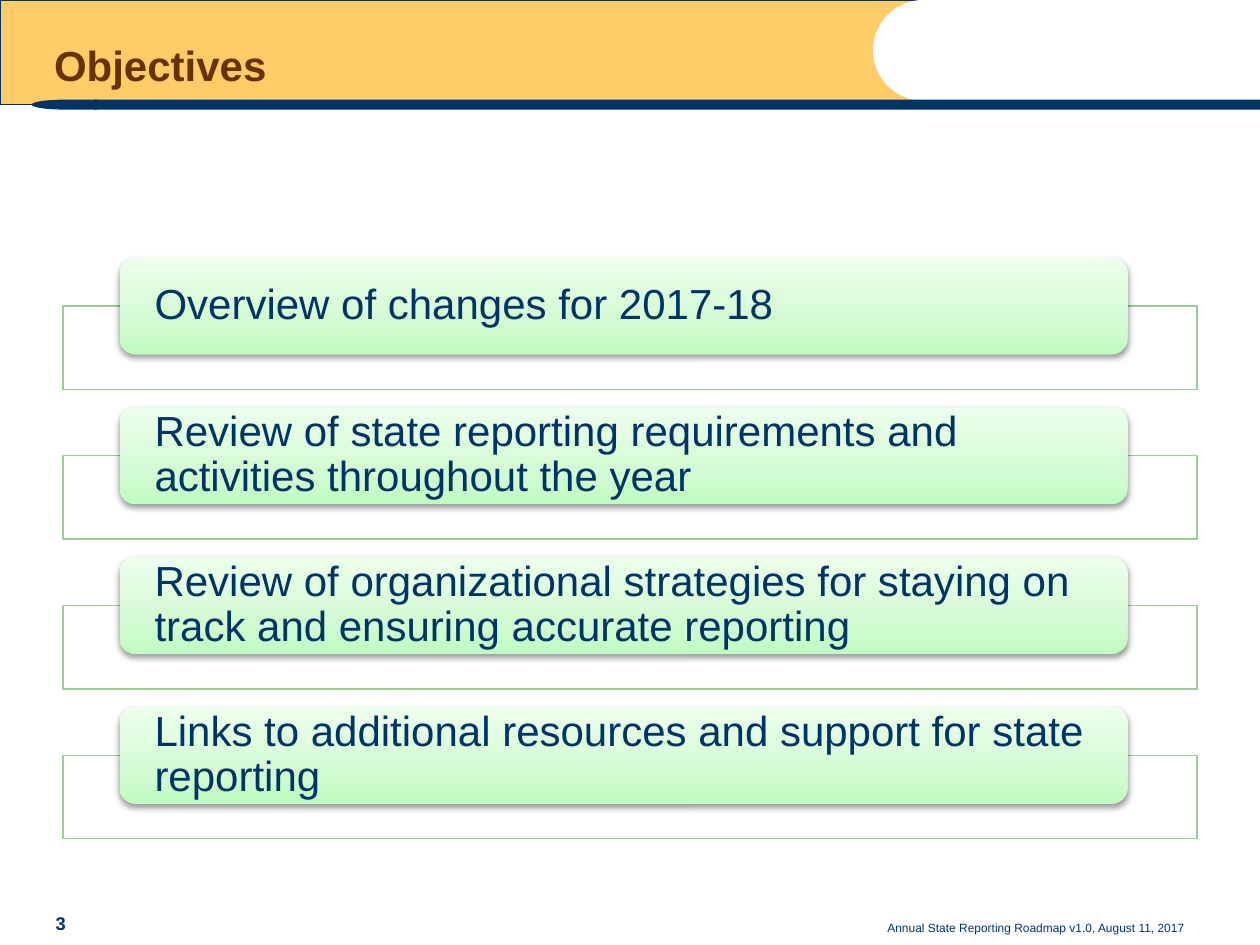
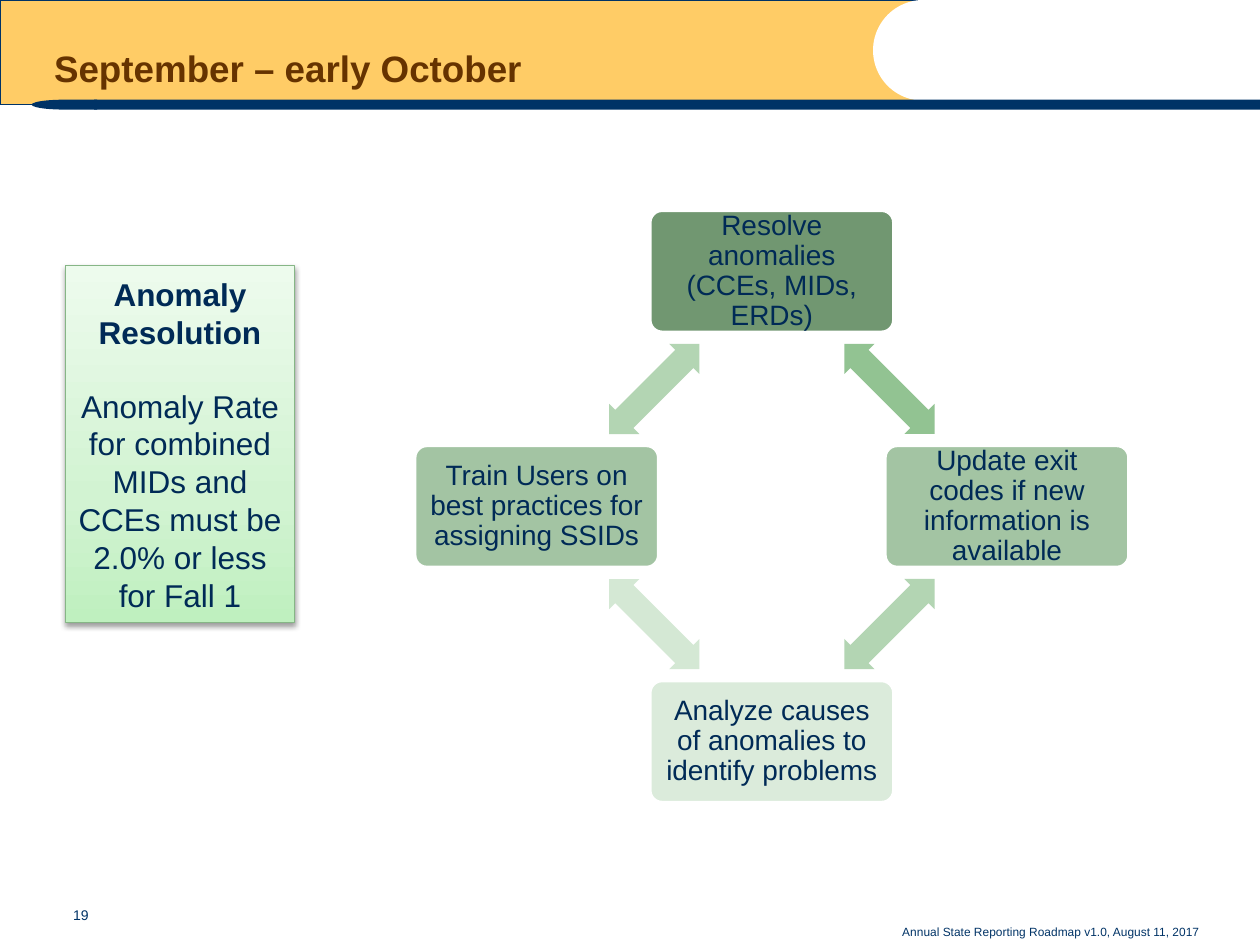
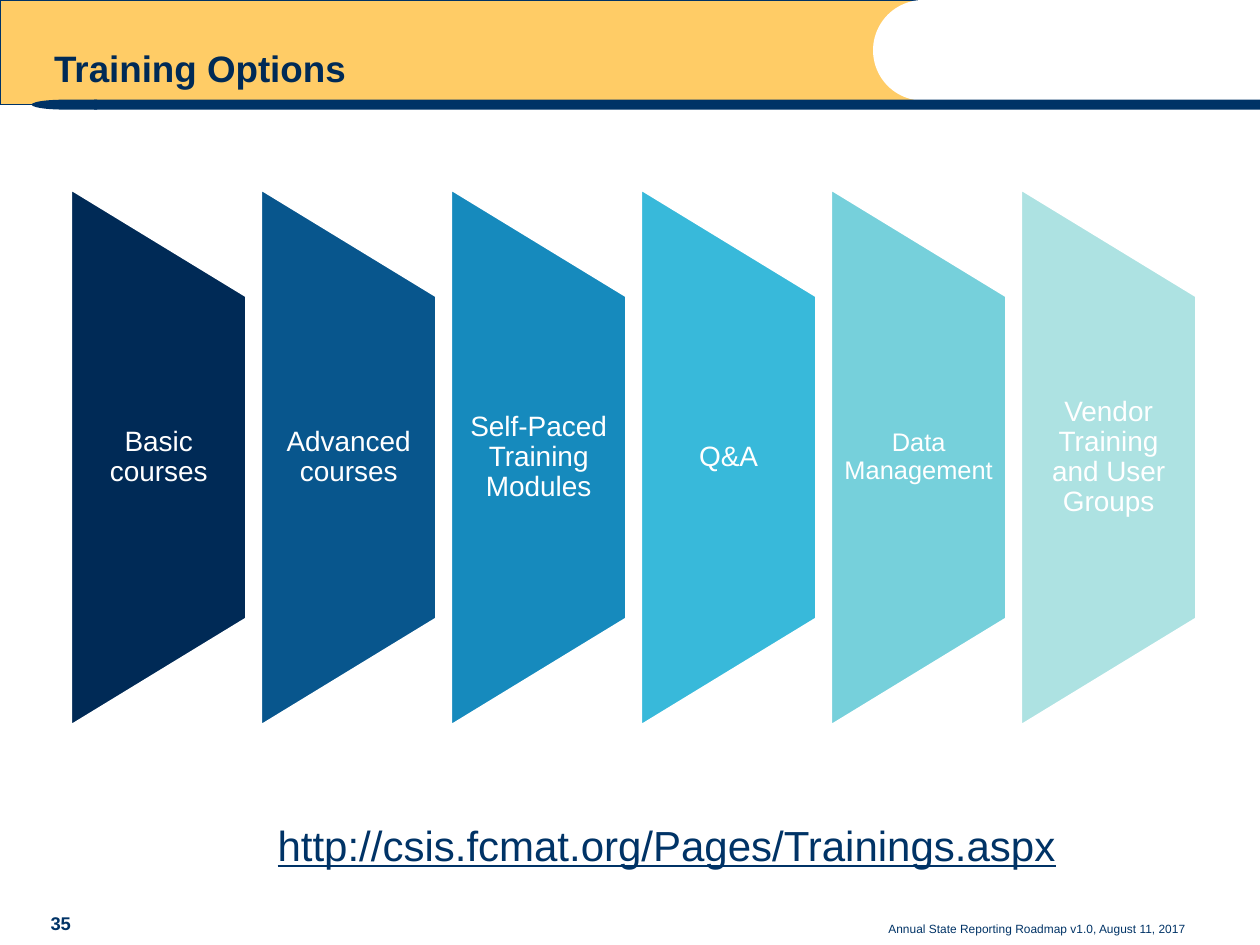
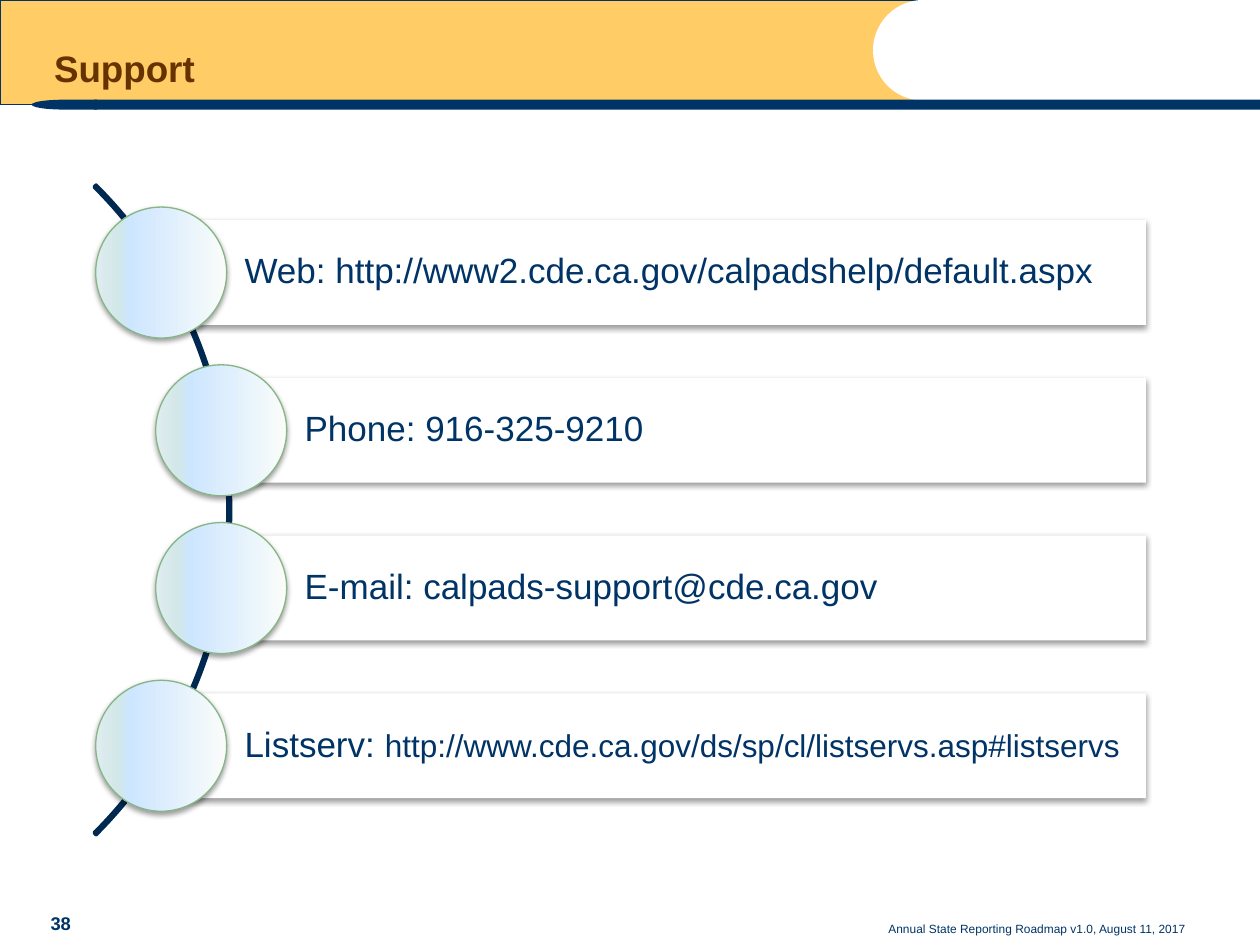
from dataclasses import dataclass
from math import cos, radians, sin

from lxml import etree
from pptx import Presentation
from pptx import util as u
from pptx.dml.color import RGBColor
from pptx.enum import shapes, text
from pptx.oxml.ns import qn

Kind = shapes.MSO_SHAPE
Align = text.PP_ALIGN
Anchor = text.MSO_ANCHOR


@dataclass(frozen=True)
class Theme:
    font: str = "Arial"
    navy: str = "003366"
    deep: str = "002A56"
    arc: str = "002952"
    brown: str = "663300"
    gold: str = "FFCC66"
    white: str = "FFFFFF"
    frame_line: str = "99CC99"
    soft_line: str = "86B686"
    mint: tuple = ((0, "C1FBC1"), (35, "D3FBD3"), (100, "EDFFED"))
    sage: tuple = ((0, "BFF0BF"), (35, "D2F3D2"), (100, "EDFBED"))
    bubble: tuple = ((0, "FAFCFA"), (74, "CDE6FF"), (83, "D2E7E8"), (100, "E0EDF0"))
    main_title: float = 24
    title: float = 21
    large: float = 24
    contact: float = 20
    callout: float = 18
    label: float = 16
    small_label: float = 14.5
    page: float = 10.5
    small_page: float = 8
    footer: float = 6.8


THEME = Theme()
FOOTER = "Annual State Reporting Roadmap v1.0, August 11, 2017"


def rgb(colour):
    return RGBColor.from_string(colour)


def cm_box(*lengths):
    return [u.Cm(length) for length in lengths]


def format_run(run, size, colour, bold=False, underline=False):
    run.font.name = THEME.font
    run.font.size = u.Pt(size)
    run.font.color.rgb = rgb(colour)
    run.font.bold = bold
    run.font.underline = underline


def write(shape, words, size, colour=THEME.navy, align=Align.LEFT, anchor=Anchor.MIDDLE,
          insets=(0.25, 0.13, 0.25, 0.13), spacing=0.9, **style):
    """Fill a shape with one paragraph; insets are left, top, right, bottom in cm."""
    frame = shape.text_frame
    frame.word_wrap = True
    frame.vertical_anchor = anchor
    (frame.margin_left, frame.margin_top,
     frame.margin_right, frame.margin_bottom) = cm_box(*insets)
    paragraph = frame.paragraphs[0]
    paragraph.text = words
    paragraph.alignment = align
    paragraph.line_spacing = spacing
    format_run(paragraph.runs[0], size, colour, **style)
    return paragraph


def add_text(slide, box, words, size, **style):
    label = slide.shapes.add_textbox(*cm_box(*box))
    write(label, words, size, **style)
    return label


def add_form(slide, kind, box, fill=None, line=None, width=0.75):
    form = slide.shapes.add_shape(kind, *cm_box(*box))
    form.shadow.inherit = False
    if fill:
        form.fill.solid()
        form.fill.fore_color.rgb = rgb(fill)
    else:
        form.fill.background()
    if line:
        form.line.color.rgb = rgb(line)
        form.line.width = u.Pt(width)
    else:
        form.line.fill.background()
    return form


def add_gradient(form, stops, angle):
    properties = form._element.spPr
    gradient = etree.Element(qn("a:gradFill"), rotWithShape="1")
    stop_list = etree.SubElement(gradient, qn("a:gsLst"))
    for percent, colour in stops:
        stop = etree.SubElement(stop_list, qn("a:gs"), pos=str(percent * 1000))
        etree.SubElement(stop, qn("a:srgbClr"), val=colour)
    etree.SubElement(gradient, qn("a:lin"), ang=str(angle * 60000), scaled="0")
    properties.replace(properties.find(qn("a:noFill")), gradient)


def add_shadow(form):
    effects = form._element.spPr.find(qn("a:effectLst"))
    shadow = etree.SubElement(effects, qn("a:outerShdw"), blurRad="40000", dist="20000",
                              dir="5400000", rotWithShape="0")
    colour = etree.SubElement(shadow, qn("a:srgbClr"), val="000000")
    etree.SubElement(colour, qn("a:alpha"), val="38000")


def set_up_layout(layout, slide):
    """Move the header band, drawn on the slide, to the layout that all slides share."""
    title, *unused = layout.placeholders
    title.left, title.top, title.width, title.height = cm_box(0.84, 0.48, 15.24, 1.47)
    for placeholder in unused:
        placeholder._element.getparent().remove(placeholder._element)

    banner = add_form(slide, Kind.RECTANGLE, (0, 0, 18.62, 2.11), THEME.gold, THEME.navy)
    notch = add_form(slide, Kind.OVAL, (17.6, 0, 2.03, 2.03), THEME.white)
    rule = add_form(slide, Kind.RECTANGLE, (1.9, 2.01, 23.5, 0.2), THEME.navy)
    rule_tip = add_form(slide, Kind.FLOWCHART_DELAY, (0.64, 2.01, 1.32, 0.2), THEME.navy)
    rule_tip._element.spPr.find(qn("a:xfrm")).set("flipH", "1")
    for part in (banner, notch, rule, rule_tip):
        title._element.addprevious(part._element)


def add_title(slide, words, size=THEME.title, colour=THEME.brown):
    title = slide.shapes.title
    write(title, words, size, colour, anchor=Anchor.BOTTOM, bold=True)
    title.text_frame.auto_size = text.MSO_AUTO_SIZE.NONE


def add_footer(slide, right=24.15, bottom=19):
    add_text(slide, (right - 13.56, bottom - 1.02, 13.56, 1.02), FOOTER, THEME.footer,
             align=Align.RIGHT, anchor=Anchor.BOTTOM, spacing=1)


def add_page_number(slide, number, size=THEME.page, bottom=18.97, align=Align.CENTER,
                    bold=True):
    add_text(slide, (0.41, bottom - 0.94, 1.63, 0.94), number, size, align=align,
             anchor=Anchor.BOTTOM, spacing=1, bold=bold)


def build_objectives(slide):
    add_title(slide, "Objectives", THEME.main_title)
    objectives = (
        "Overview of changes for 2017-18",
        "Review of state reporting requirements and activities throughout the year",
        "Review of organizational strategies for staying on track and ensuring accurate reporting",
        "Links to additional resources and support for state reporting",
    )
    for row, objective in enumerate(objectives):
        top = 5.18 + row * 3.02
        add_form(slide, Kind.RECTANGLE, (1.27, top + 0.99, 22.86, 1.68),
                 THEME.white, THEME.frame_line)
        bar = add_form(slide, Kind.ROUNDED_RECTANGLE, (2.41, top, 20.32, 1.97))
        add_gradient(bar, THEME.mint, 270)
        add_shadow(bar)
        write(bar, objective, THEME.large, insets=(0.61, 0, 0.61, 0))
    add_footer(slide, right=24.13, bottom=18.97)
    add_page_number(slide, "3")


def build_anomaly_cycle(slide):
    add_title(slide, "September – early October")
    centre_x, centre_y, radius = 15.56, 10.21, 4.74
    card_width, card_height = 4.92, 2.46
    arrow_width, arrow_height = 2.57, 0.86
    steps = (
        ("Resolve anomalies (CCEs, MIDs, ERDs)", "719771", "92C392"),
        ("Update exit codes if new information is available", "A3C4A3", "B3D5B3"),
        ("Analyze causes of anomalies to identify problems", "DBEBDB", "D4E8D4"),
        ("Train Users on best practices for assigning SSIDs", "A3C4A3", "B3D5B3"),
    )

    def around(degrees, distance, width, height):
        """Box whose middle lies on the ring at the given angle."""
        angle = radians(degrees)
        return (centre_x + distance * cos(angle) - width / 2,
                centre_y + distance * sin(angle) - height / 2, width, height)

    for turn, (step, card_fill, arrow_fill) in enumerate(steps):
        angle = turn * 90 - 90
        card = add_form(slide, Kind.ROUNDED_RECTANGLE,
                        around(angle, radius, card_width, card_height),
                        card_fill, THEME.white, 2)
        card.adjustments[0] = 0.1
        write(card, step, THEME.label, THEME.deep, Align.CENTER, insets=(0.18,) * 4)
        arrow = add_form(slide, Kind.LEFT_RIGHT_ARROW,
                         around(angle + 45, radius * cos(radians(45)),
                                arrow_width, arrow_height), arrow_fill)
        arrow.adjustments[0] = 0.6
        arrow.adjustments[1] = 0.5
        arrow.rotation = angle + 135

    add_page_number(slide, "19", THEME.small_page, 18.75, Align.RIGHT, bold=False)
    callout = add_form(slide, Kind.RECTANGLE, (1.32, 5.36, 4.62, 7.19), line=THEME.soft_line)
    add_gradient(callout, THEME.sage, 270)
    add_shadow(callout)
    write(callout, "Anomaly Resolution", THEME.callout, THEME.deep, Align.CENTER,
          spacing=1, bold=True)
    limit = callout.text_frame.add_paragraph()
    limit.text = "Anomaly Rate for combined MIDs and CCEs must be 2.0% or less for Fall 1"
    limit.alignment = Align.CENTER
    limit.space_before = u.Pt(20.7)
    format_run(limit.runs[0], THEME.callout, THEME.deep)
    add_footer(slide, right=24.43, bottom=19.05)


def build_training(slide):
    add_title(slide, "Training Options", colour=THEME.deep)
    add_footer(slide)
    options = (
        ("Basic courses", THEME.deep, THEME.label),
        ("Advanced courses", "08568D", THEME.label),
        ("Self-Paced Training Modules", "168ABD", THEME.label),
        ("Q&A", "38B9DA", THEME.label),
        ("Data Management", "76D0DB", THEME.small_label),
        ("Vendor Training and User Groups", "ADE2E2", THEME.label),
    )
    width, height, middle, label_height = 3.56, 10.85, 9.22, 6.5
    for column, (option, fill, size) in enumerate(options):
        left = 1.42 + column * 3.83
        panel = add_form(slide, Kind.FLOWCHART_MANUAL_OPERATION,
                         (left + (width - height) / 2, middle - width / 2, height, width),
                         fill, THEME.white, 2)
        panel.rotation = 270
        add_text(slide, (left, middle - label_height / 2, width, label_height), option, size,
                 colour=THEME.white, align=Align.CENTER, insets=(0.25, 0, 0.25, 0))
    address = add_text(slide, (5.26, 16.51, 16.36, 1.17),
                       "http://csis.fcmat.org/Pages/Trainings.aspx", THEME.large,
                       align=Align.CENTER, anchor=Anchor.TOP, underline=True)
    address.text_frame.word_wrap = False
    add_page_number(slide, "35")


def build_support(slide):
    add_title(slide, "Support")
    arc = add_form(slide, Kind.BLOCK_ARC, (-13.87, 1.02, 18.52, 18.52), line=THEME.arc, width=2)
    for index, value in enumerate((189, 27, 0.003)):
        arc.adjustments[index] = value

    outer, inner, right = 3.25, 4.46, 23.1
    bar_height, bubble_size = 2.11, 2.64
    contacts = (
        (outer, "Web: http://www2.cde.ca.gov/calpadshelp/default.aspx", ""),
        (inner, "Phone: 916-325-9210", ""),
        (inner, "E-mail: calpads-support@cde.ca.gov", ""),
        (outer, "Listserv: ", "http://www.cde.ca.gov/ds/sp/cl/listservs.asp#listservs"),
    )
    for row, (left, contact, small_address) in enumerate(contacts):
        top = 4.44 + row * 3.18
        bar = add_form(slide, Kind.RECTANGLE, (left, top, right - left, bar_height), THEME.white)
        add_shadow(bar)
        line = write(bar, contact, THEME.contact, insets=(1.68, 0.15, 0.15, 0.15))
        if small_address:
            address = line.add_run()
            address.text = small_address
            format_run(address, THEME.callout, THEME.navy)
        bubble = add_form(slide, Kind.OVAL,
                          (left - bubble_size / 2, top + (bar_height - bubble_size) / 2,
                           bubble_size, bubble_size), line=THEME.soft_line)
        add_gradient(bubble, THEME.bubble, 180)
        add_shadow(bubble)
    add_footer(slide)
    add_page_number(slide, "38")


def main():
    deck = Presentation()
    deck.slide_width, deck.slide_height = cm_box(25.4, 19.05)
    layout = deck.slide_layouts.get_by_name("Title Only")
    builders = (build_objectives, build_anomaly_cycle, build_training, build_support)
    for number, build in enumerate(builders):
        slide = deck.slides.add_slide(layout)
        if number == 0:
            set_up_layout(layout, slide)
        build(slide)
    deck.save("out.pptx")


if __name__ == "__main__":
    main()
